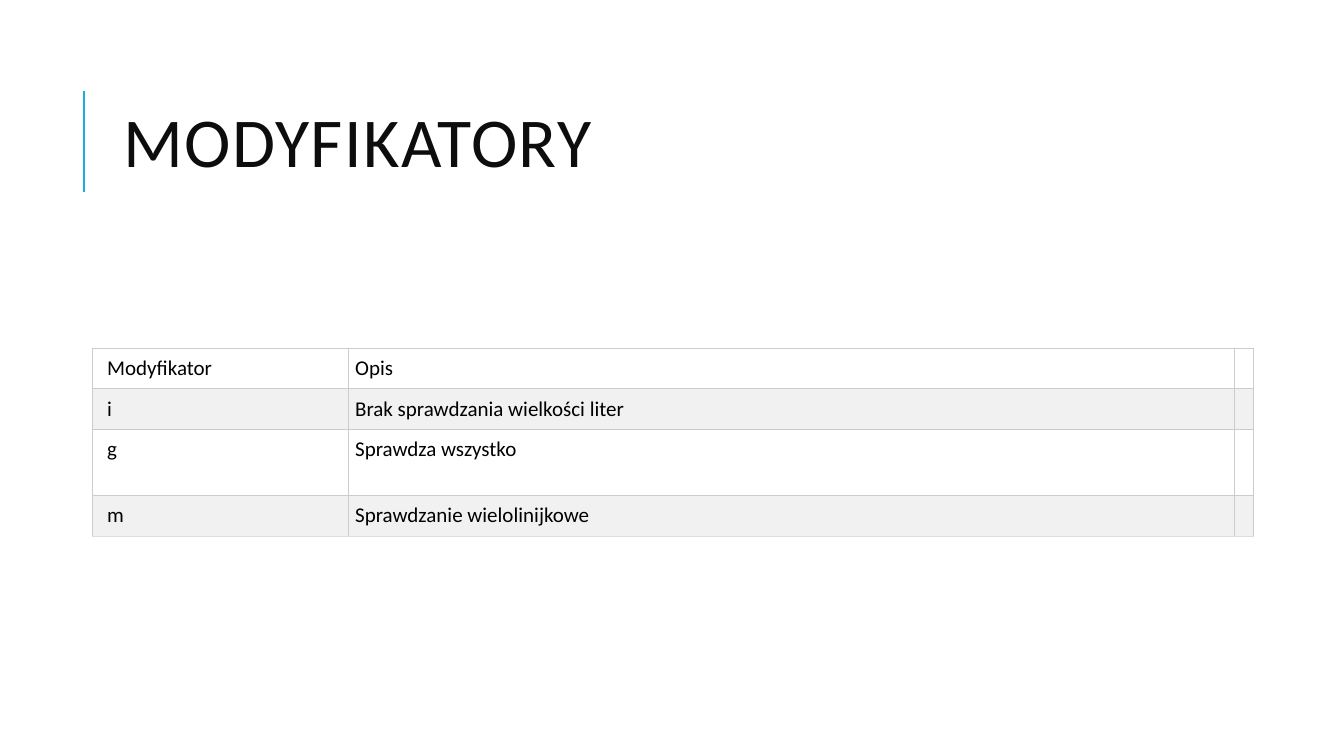
from lxml import etree
from pptx import Presentation
from pptx.dml.color import RGBColor
from pptx.enum.shapes import MSO_CONNECTOR
from pptx.enum.text import MSO_ANCHOR, MSO_AUTO_SIZE, PP_ALIGN
from pptx.oxml.ns import qn
from pptx.util import Cm, Pt

STRAIGHT = MSO_CONNECTOR.STRAIGHT
MIDDLE = MSO_ANCHOR.MIDDLE
NO_AUTOFIT = MSO_AUTO_SIZE.NONE
LEFT = PP_ALIGN.LEFT
TITLE_ONLY = 5

MODIFIERS = [
    ("Modyfikator", "Opis", ""),
    ("i", "Brak sprawdzania wielkości liter", ""),
    ("g", "Sprawdza wszystko", ""),
    ("m", "Sprawdzanie wielolinijkowe", ""),
]
COLUMN_WIDTHS = [6.43, 22.35, 0.43]
ROW_HEIGHTS = [1.01, 1.01, 1.66, 1.01]


def rgb(value):
    return RGBColor.from_string(value)


class SlideBuilder:
    font = "Calibri"
    accent = "1CADE4"
    title_color = "0D0D0D"
    text_color = "000000"
    row_fills = ("FFFFFF", "F1F1F1")
    border = "CCCCCC"
    last_border = "DDDDDD"
    padding = Cm(0.18)
    first_padding = Cm(0.36)

    def __init__(self, slide):
        self.slide = slide

    def style_run(self, run, size, color):
        run.font.name = self.font
        run.font.size = Pt(size)
        run.font.color.rgb = rgb(color)

    def title(self, wording, left, top, width, height):
        heading = self.slide.shapes.title
        heading.left, heading.top = Cm(left), Cm(top)
        heading.width, heading.height = Cm(width), Cm(height)
        frame = heading.text_frame
        frame.text = wording
        frame.word_wrap = True
        frame.auto_size = NO_AUTOFIT
        frame.vertical_anchor = MIDDLE
        paragraph = frame.paragraphs[0]
        paragraph.alignment = LEFT
        paragraph.line_spacing = 0.8
        run = paragraph.runs[0]
        self.style_run(run, 50, self.title_color)
        run.font._element.set("spc", "100")

    def vertical_rule(self, x, top, bottom):
        rule = self.slide.shapes.add_connector(STRAIGHT, Cm(x), Cm(bottom), Cm(x), Cm(top))
        rule.line.color.rgb = rgb(self.accent)
        rule.line.width = Pt(1.5)
        etree.SubElement(rule._element.spPr, qn("a:effectLst"))

    def cell_borders(self, cell, bottom_color):
        properties = cell._tc.get_or_add_tcPr()
        for side in "LRTB":
            edge = etree.SubElement(properties, qn(f"a:ln{side}"), w=str(Pt(0.75)))
            fill = etree.SubElement(edge, qn("a:solidFill"))
            color = bottom_color if side == "B" else self.border
            etree.SubElement(fill, qn("a:srgbClr"), val=color)

    def table(self, rows, left, top, widths, heights):
        table = self.slide.shapes.add_table(
            len(rows), len(widths), Cm(left), Cm(top), Cm(sum(widths)), Cm(sum(heights))
        ).table
        for column, width in zip(table.columns, widths):
            column.width = Cm(width)
        for row, height in zip(table.rows, heights):
            row.height = Cm(height)
        for r, wordings in enumerate(rows):
            bottom_color = self.last_border if r == len(rows) - 1 else self.border
            for c, wording in enumerate(wordings):
                cell = table.cell(r, c)
                self.cell_borders(cell, bottom_color)
                cell.fill.solid()
                cell.fill.fore_color.rgb = rgb(self.row_fills[r % 2])
                cell.margin_left = self.first_padding if c == 0 else self.padding
                cell.margin_right = self.padding
                if wording:
                    cell.margin_top = cell.margin_bottom = self.padding
                    cell.text_frame.text = wording
                    self.style_run(cell.text_frame.paragraphs[0].runs[0], 15, self.text_color)


def main():
    presentation = Presentation()
    presentation.slide_width, presentation.slide_height = Cm(33.87), Cm(19.05)
    slide = presentation.slides.add_slide(presentation.slide_layouts[TITLE_ONLY])
    builder = SlideBuilder(slide)
    builder.vertical_rule(2.12, 2.3, 4.84)
    builder.title("MODYFIKATORY", 2.86, 1.63, 27, 4.17)
    builder.table(MODIFIERS, 2.34, 8.77, COLUMN_WIDTHS, ROW_HEIGHTS)
    presentation.save("out.pptx")


if __name__ == "__main__":
    main()
